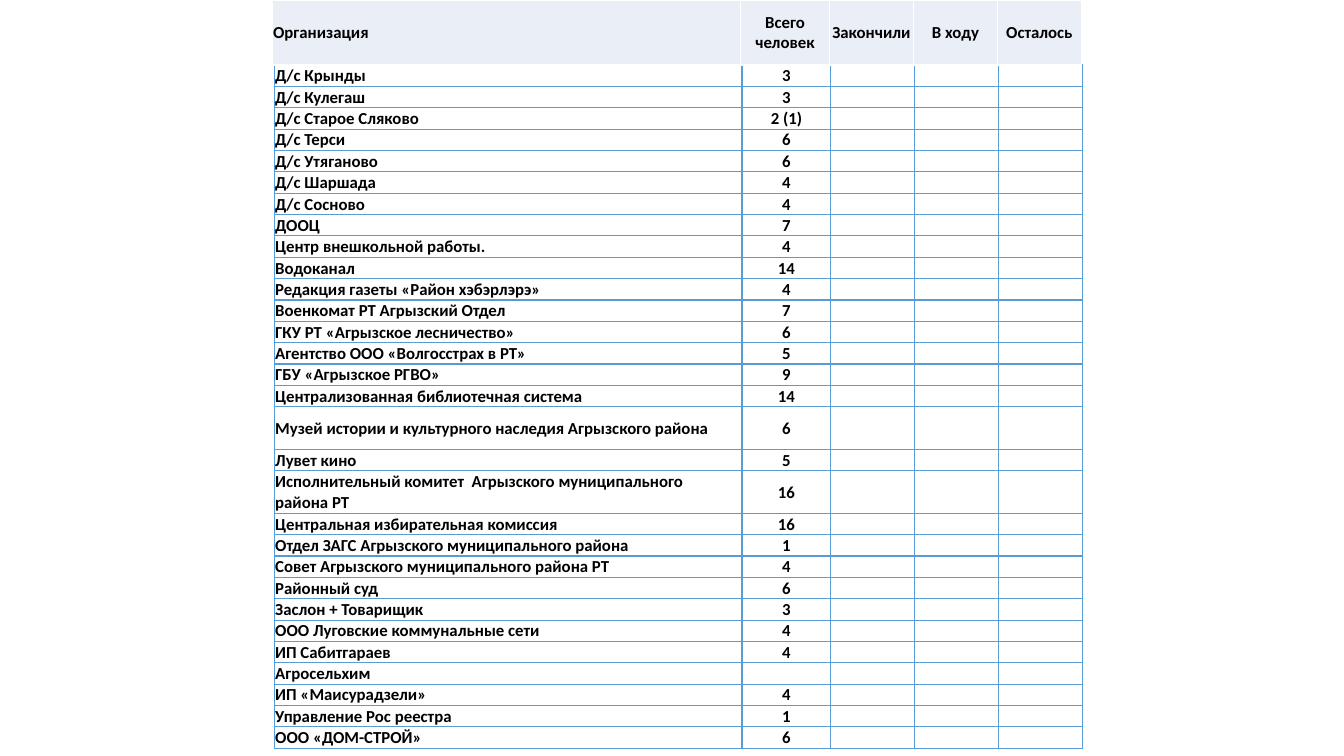
"""Build a slide with a table of organisations and head counts."""
from lxml import etree
from pptx import Presentation
from pptx.dml.color import RGBColor
from pptx.enum.text import MSO_ANCHOR, PP_ALIGN
from pptx.oxml.ns import qn
from pptx.util import Pt

MID = MSO_ANCHOR.MIDDLE
LEFT, CENTER = PP_ALIGN.LEFT, PP_ALIGN.CENTER
COLORS = {"text": "000000", "head": "EAEFF7", "white": "FFFFFF", "line": "5B9BD5"}
FONT = {"name": "Calibri", "size": Pt(12), "bold": True}
CELL = {"margin_left": Pt(0.6), "margin_right": Pt(0.6), "margin_top": Pt(0.6),
        "margin_bottom": Pt(0), "vertical_anchor": MID}
ROW = 15.25
TALL = (16, 18)
COUNTS = [60, 60, 60]

HEAD = ["Организация", "Всего человек", "Закончили", "В ходу", "Осталось"]
GROUPS = [
    ("Д/с Крынды", "3"),
    ("Д/с Кулегаш", "3"),
    ("Д/с Старое Сляково", "2 (1)"),
    ("Д/с Терси", "6"),
    ("Д/с Утяганово", "6"),
    ("Д/с Шаршада", "4"),
    ("Д/с Сосново", "4"),
    ("ДООЦ", "7"),
    ("Центр внешкольной работы.", "4"),
    ("Водоканал", "14"),
    ("Редакция газеты «Район хэбэрлэрэ»", "4"),
    ("Военкомат РТ Агрызский Отдел", "7"),
    ("ГКУ РТ «Агрызское лесничество»", "6"),
    ("Агентство ООО «Волгосстрах в РТ»", "5"),
    ("ГБУ «Агрызское РГВО»", "9"),
    ("Централизованная библиотечная система", "14"),
    ("Музей истории и культурного наследия Агрызского района", "6"),
    ("Лувет кино", "5"),
    ("Исполнительный комитет  Агрызского муниципального  района РТ", "16"),
    ("Центральная избирательная комиссия", "16"),
    ("Отдел ЗАГС Агрызского муниципального района", "1"),
    ("Совет Агрызского муниципального района РТ", "4"),
    ("Районный суд", "6"),
    ("Заслон + Товарищик", "3"),
    ("ООО Луговские коммунальные сети", "4"),
    ("ИП Сабитгараев", "4"),
    ("Агросельхим", ""),
    ("ИП «Маисурадзели»", "4"),
    ("Управление Рос реестра", "1"),
    ("ООО «ДОМ-СТРОЙ»", "6"),
]


def style(cell, text, align, line, fill):
    for key, value in CELL.items():
        setattr(cell, key, value)
    para = cell.text_frame.paragraphs[0]
    para.alignment = align
    if text:
        run = para.add_run()
        run.text = text
        for key, value in FONT.items():
            setattr(run.font, key, value)
        run.font.color.rgb = RGBColor.from_string(COLORS["text"])
    else:
        para._p.get_or_add_endParaRPr().set("sz", "1200")
    props = cell._tc.get_or_add_tcPr()
    for side in ("lnL", "lnR", "lnT", "lnB"):
        edge = etree.SubElement(props, qn("a:" + side), w=str(Pt(1)))
        solid = etree.SubElement(edge, qn("a:solidFill"))
        etree.SubElement(solid, qn("a:srgbClr"), val=COLORS[line])
    if fill:
        cell.fill.solid()
        cell.fill.fore_color.rgb = RGBColor.from_string(COLORS[fill])
    else:
        cell.fill.background()


def grid(left, top, widths, heights, rows, line, fill):
    table = slide.shapes.add_table(
        len(rows), len(widths), Pt(left), Pt(top),
        Pt(sum(widths)), Pt(sum(heights))).table
    table.first_row = table.horz_banding = False
    for col, width in zip(table.columns, widths):
        col.width = Pt(width)
    for row, height, texts in zip(table.rows, heights, rows):
        row.height = Pt(height)
        for index, (cell, text) in enumerate(zip(row.cells, texts)):
            style(cell, text, CENTER if index else LEFT, line, fill)


deck = Presentation()
deck.slide_width, deck.slide_height = Pt(960), Pt(540)
slide = deck.slides.add_slide(deck.slide_layouts[6])

heights = [ROW * 2 if index in TALL else ROW for index in range(len(GROUPS))]
rows = [[name, total, "", "", ""] for name, total in GROUPS]
grid(196, 46.5, [334, 63.5] + COUNTS, heights, rows, "line", None)
grid(194.5, 0, [334.5, 63.5] + COUNTS, [46.5], [HEAD], "white", "head")

deck.save("out.pptx")
